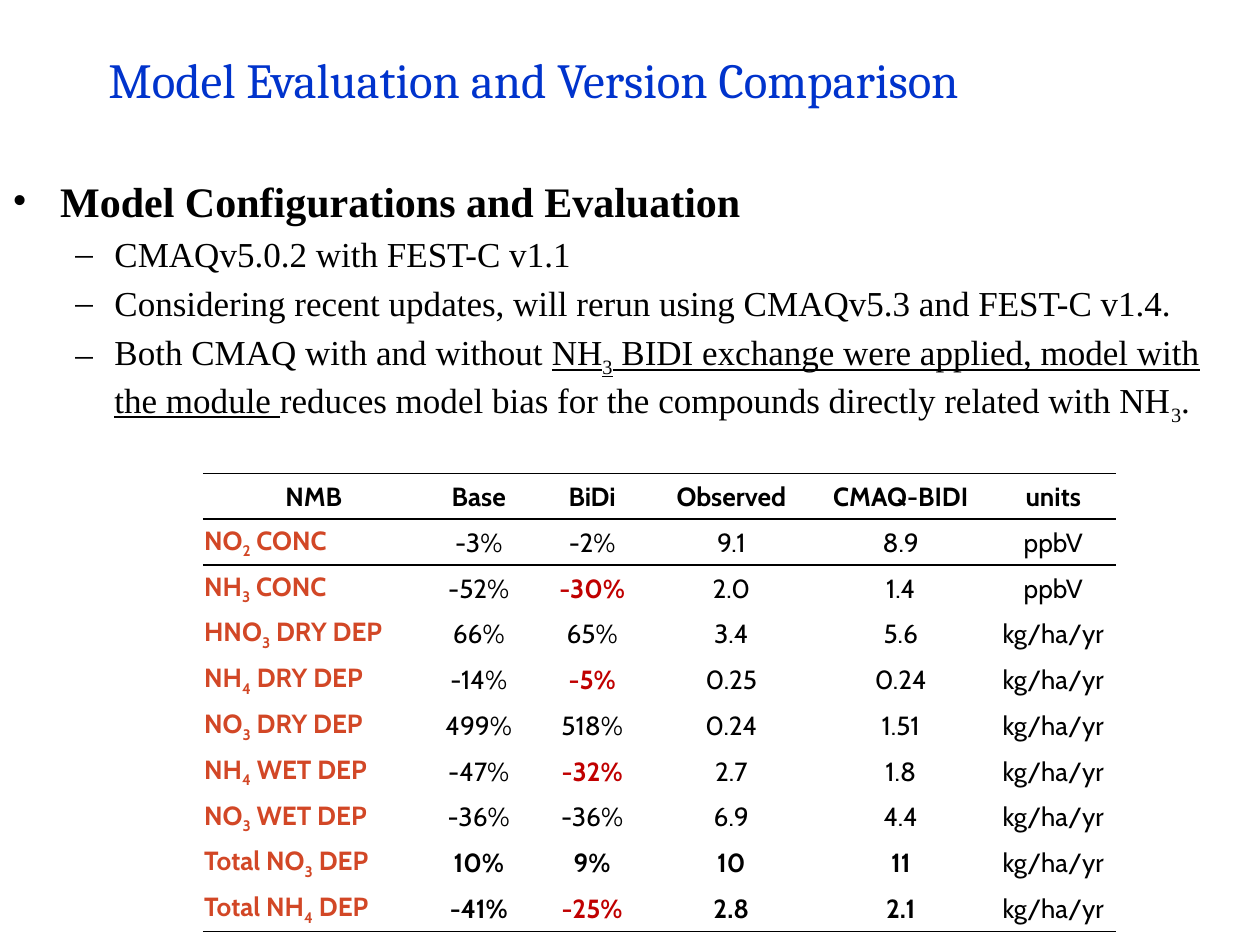
from lxml.etree import SubElement
from pptx import Presentation
from pptx.dml.color import RGBColor
from pptx.enum.text import MSO_ANCHOR, PP_ALIGN
from pptx.oxml.ns import qn
from pptx.util import Inches, Pt

BLACK = RGBColor(0x00, 0x00, 0x00)
BLUE = RGBColor(0x00, 0x33, 0xCC)
ORANGE = RGBColor(0xD2, 0x47, 0x26)
RED = RGBColor(0xC0, 0x00, 0x00)


def add_text(p, text, color=BLACK, **fmt):
    """Add runs to a paragraph; the character after "_" is a subscript."""
    head, *tails = text.split("_")
    pieces = [(head, False)]
    for tail in tails:
        pieces += [(tail[0], True), (tail[1:], False)]
    for piece, subscript in pieces:
        if not piece:
            continue
        r = p.add_run()
        r.text = piece
        r.font.color.rgb = color
        for name, value in fmt.items():
            setattr(r.font, name, value)
        if subscript:
            r.font._element.set("baseline", "-25000")


def add_border(cell, side, width):
    ln = SubElement(cell._tc.get_or_add_tcPr(), qn(f"a:{side}"), w=str(Pt(width)))
    fill = SubElement(ln, qn("a:solidFill"))
    SubElement(fill, qn("a:srgbClr"), val=str(BLACK))


prs = Presentation()
prs.slide_width, prs.slide_height = Inches(10), Inches(7.5)
W, H = prs.slide_width, prs.slide_height
s = prs.slides.add_slide(prs.slide_layouts[5])

# Title
title = s.shapes.title
title.left, title.top = int(W * 0.076), 0
title.width, title.height = int(W * 0.91), H // 6
tf = title.text_frame
tf.vertical_anchor = MSO_ANCHOR.MIDDLE
p = tf.paragraphs[0]
p.alignment = PP_ALIGN.LEFT
add_text(p, "Model Evaluation and Version Comparison", BLUE, name="Cambria", size=Pt(28))

# Bulleted text: level, then runs as (text, underlined)
BULLETS = [
    (0, [("Model Configurations and Evaluation", False)]),
    (1, [("CMAQv5.0.2 with FEST-C v1.1", False)]),
    (1, [("Considering recent updates, will rerun using CMAQv5.3 and FEST-C v1.4.", False)]),
    (1, [("Both CMAQ with and without ", False),
         ("NH_3 BIDI exchange were applied, model with the module ", True),
         ("reduces model bias for the compounds directly related with NH_3.", False)]),
]
LEVELS = [  # bullet, left margin, hanging indent, font size, bold
    ("•", 0.38, 0.38, 24, True),
    ("–", 0.81, 0.31, 20, False),
]
sp = s.shapes.add_textbox(0, int(H * 0.179), W, int(H * 0.6))
tf = sp.text_frame
tf.word_wrap = True
for i, (level, runs) in enumerate(BULLETS):
    bullet, margin, hanging, size, bold = LEVELS[level]
    p = tf.add_paragraph() if i else tf.paragraphs[0]
    p.level = level
    p.space_before = Pt(size * 0.2)
    pPr = p._p.get_or_add_pPr()
    pPr.set("marL", str(Inches(margin)))
    pPr.set("indent", str(-Inches(hanging)))
    SubElement(pPr, qn("a:buFont"), typeface="Times New Roman")
    SubElement(pPr, qn("a:buChar"), char=bullet)
    for text, underline in runs:
        add_text(p, text, name="Times New Roman", size=Pt(size), bold=bold,
                 underline=underline)

# Evaluation table
ROWS = [
    ("NMB", "Base", "BiDi", "Observed", "CMAQ-BIDI", "units"),
    ("NO_2 CONC", "-3%", "-2%", "9.1", "8.9", "ppbV"),
    ("NH_3 CONC", "-52%", "-30%", "2.0", "1.4", "ppbV"),
    ("HNO_3 DRY DEP", "66%", "65%", "3.4", "5.6", "kg/ha/yr"),
    ("NH_4 DRY DEP", "-14%", "-5%", "0.25", "0.24", "kg/ha/yr"),
    ("NO_3 DRY DEP", "499%", "518%", "0.24", "1.51", "kg/ha/yr"),
    ("NH_4 WET DEP", "-47%", "-32%", "2.7", "1.8", "kg/ha/yr"),
    ("NO_3 WET DEP", "-36%", "-36%", "6.9", "4.4", "kg/ha/yr"),
    ("Total NO_3 DEP", "10%", "9%", "10", "11", "kg/ha/yr"),
    ("Total NH_4 DEP", "-41%", "-25%", "2.8", "2.1", "kg/ha/yr"),
]
COLUMNS = [0.176, 0.086, 0.094, 0.127, 0.142, 0.1]  # shares of the slide width
CELL_FORMAT = dict(vertical_anchor=MSO_ANCHOR.MIDDLE, margin_left=Inches(0.01),
                   margin_right=Inches(0.01), margin_top=Inches(0.01), margin_bottom=0)
NO_STYLE = "{2D5ABB26-0587-4C30-8999-92F81FD0307C}"

table = s.shapes.add_table(len(ROWS), len(COLUMNS), int(W * 0.161), int(H * 0.501),
                           int(W * sum(COLUMNS)), int(H * 0.485)).table
table._tbl.tblPr.find(qn("a:tableStyleId")).text = NO_STYLE
table.first_row = table.horz_banding = False
for column, share in zip(table.columns, COLUMNS):
    column.width = int(W * share)

last = len(ROWS) - 1
for i, row in enumerate(ROWS):
    improved = "NH" in row[0]
    total = row[0].startswith("Total")
    for j, text in enumerate(row):
        cell = table.cell(i, j)
        for name, value in CELL_FORMAT.items():
            setattr(cell, name, value)
        color, bold = BLACK, i == 0 or (total and j < 5)
        if i and j == 0:
            color, bold = ORANGE, True
        elif improved and j == 2:
            color, bold = RED, True
        p = cell.text_frame.paragraphs[0]
        p.alignment = PP_ALIGN.LEFT if i and j == 0 else PP_ALIGN.CENTER
        add_text(p, text, color, name="Cabin", size=Pt(15), bold=bold)

        # Rules above and below the header, and under the last row
        if i <= 1:
            add_border(cell, "lnT", 1)
        if i in (0, last):
            add_border(cell, "lnB", 0.5 if i else 1)
        cell.fill.background()

prs.save("out.pptx")
